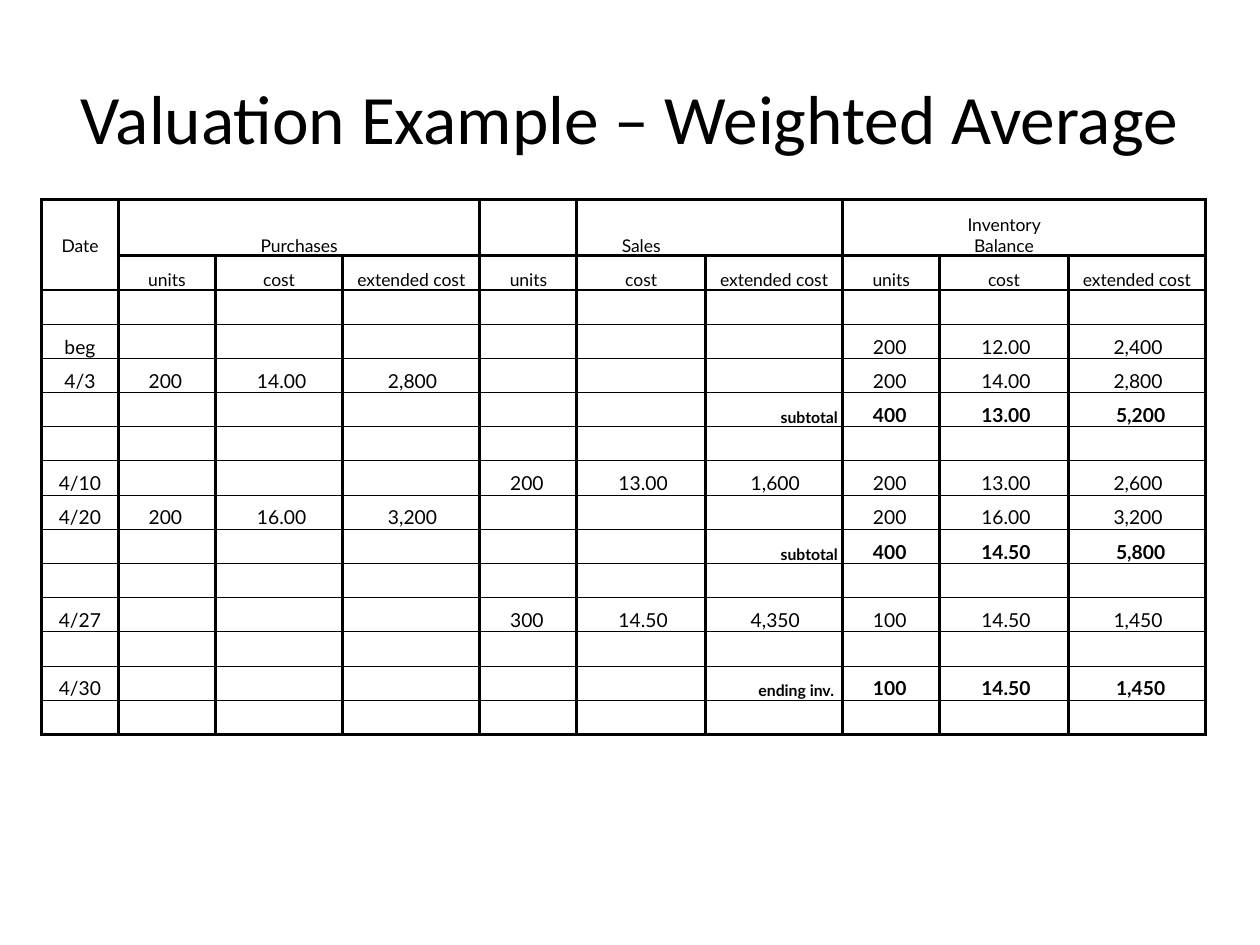
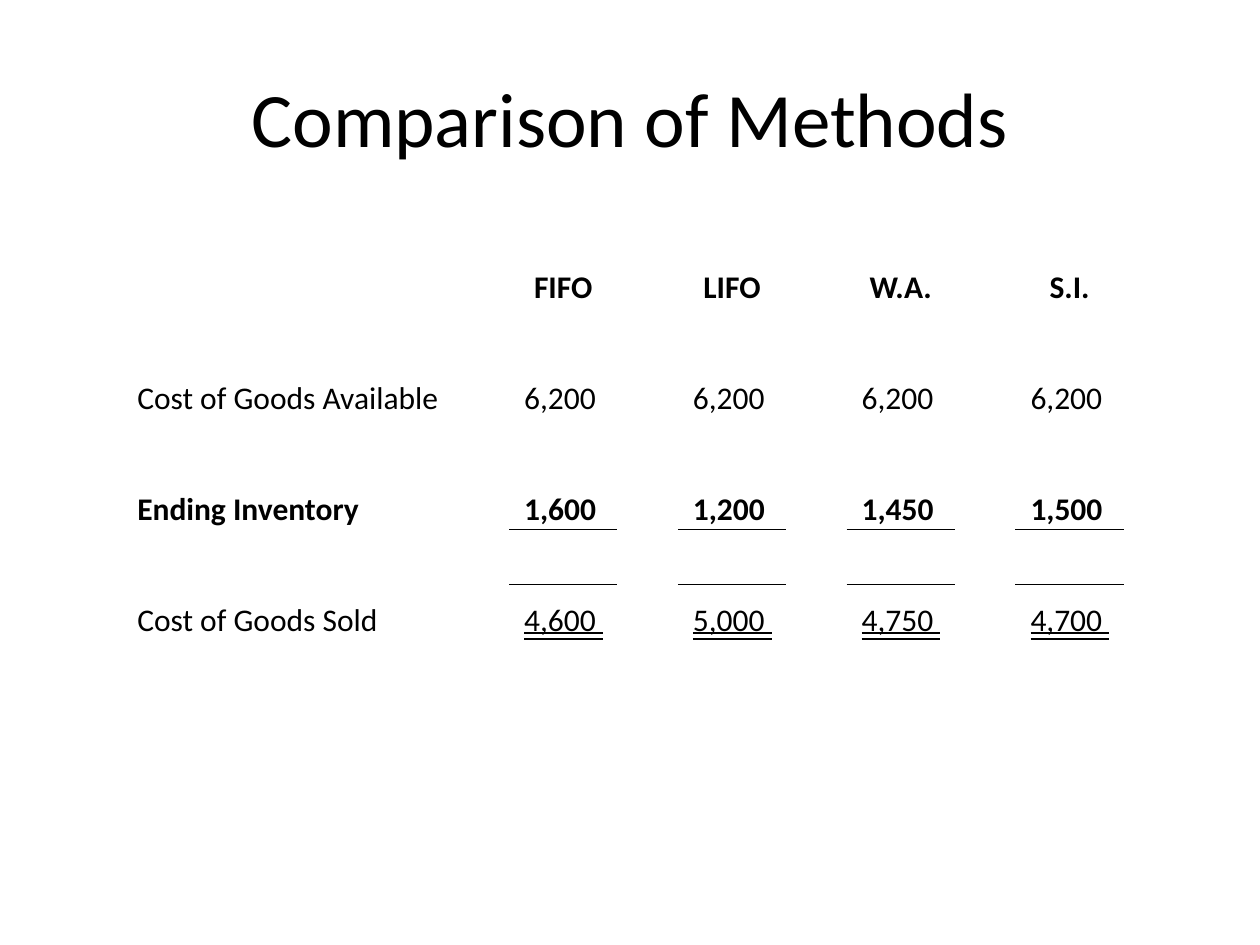
from lxml import etree
from pptx import Presentation
from pptx import util as u
from pptx.dml.color import RGBColor
from pptx.enum import text
from pptx.oxml import ns

COLORS = {"ink": "000000"}
FONTS = {"main": "Calibri", "ledger": "Lato"}
PLAIN_TABLE_STYLE = "{2D5ABB26-0587-4C30-8999-92F81FD0307C}"
CENTER, RIGHT = text.PP_ALIGN.CENTER, text.PP_ALIGN.RIGHT
SINGLE = text.MSO_UNDERLINE.SINGLE_LINE
DOUBLE = text.MSO_UNDERLINE.DOUBLE_LINE


def add_xml(parent, tag, **attributes):
    return etree.SubElement(parent, ns.qn(tag), attributes)


class Deck:
    """Holds the shared style and the current slide."""

    def __init__(self):
        self.presentation = Presentation()
        self.presentation.slide_width = u.Inches(10)
        self.presentation.slide_height = u.Inches(7.5)
        self.slide = None

    def new_slide(self, title, left, width, size):
        layout = self.presentation.slide_layouts[6]
        self.slide = self.presentation.slides.add_slide(layout)
        box = self.slide.shapes.add_textbox(
            u.Inches(left), u.Inches(0.3), u.Inches(width), u.Inches(1.25))
        frame = box.text_frame
        frame.word_wrap = True
        frame.vertical_anchor = text.MSO_ANCHOR.MIDDLE
        frame.paragraphs[0].alignment = CENTER
        self.run(frame.paragraphs[0], title, size=size)

    def run(self, paragraph, words, **font_format):
        run = paragraph.add_run()
        run.text = words
        run.font.color.rgb = RGBColor.from_string(COLORS["ink"])
        values = {"name": FONTS["main"], "bold": False, **font_format}
        values["size"] = u.Pt(values["size"])
        for name, value in values.items():
            setattr(run.font, name, value)

    def table(self, left, top, widths, heights):
        frame = self.slide.shapes.add_table(
            len(heights), len(widths), u.Inches(left), u.Inches(top),
            u.Inches(sum(widths)), u.Inches(sum(heights)))
        table = frame.table
        table.first_row = table.horz_banding = False
        frame._element.find(".//" + ns.qn("a:tableStyleId")).text = PLAIN_TABLE_STYLE
        for column, width in zip(table.columns, widths):
            column.width = u.Inches(width)
        for row, height in zip(table.rows, heights):
            row.height = u.Inches(height)
        return table

    def cell(self, cell, words="", borders=None, align=None, indent=0,
             right=0.01, **font_format):
        """Fill one cell; borders maps the sides L, R, T, B to points."""
        margins = {"left": 0.01, "right": right, "top": 0.01, "bottom": 0}
        for side, margin in margins.items():
            setattr(cell, "margin_" + side, u.Inches(margin))
        cell.vertical_anchor = text.MSO_ANCHOR.BOTTOM
        properties = cell._tc.get_or_add_tcPr()
        for side in "LRTB":
            points = (borders or {}).get(side)
            if points:
                line = add_xml(properties, "a:ln" + side, w=str(u.Pt(points)))
                add_xml(add_xml(line, "a:solidFill"), "a:srgbClr", val=COLORS["ink"])
        cell.fill.background()

        paragraph = cell.text_frame.paragraphs[0]
        if not words:
            add_xml(paragraph._p, "a:endParaRPr", sz=str(font_format["size"] * 100))
            return
        if align is not None:
            paragraph.alignment = align
        if indent:
            position = str(u.Inches(indent))
            paragraph_format = paragraph._p.get_or_add_pPr()
            if font_format.get("underline"):
                # The tab carries the underline from the cell edge to the figure
                stops = add_xml(paragraph_format, "a:tabLst")
                add_xml(stops, "a:tab", pos=position, algn="l")
                words = f"\t{words} "
            else:
                paragraph_format.set("marL", position)
                paragraph_format.set("indent", "0")
        self.run(paragraph, words, **font_format)


# Weighted average ledger: date, purchases, sales, balance, note of a total row
LEDGER = [
    (),
    ("beg", None, None, ("200", "12.00", "2,400")),
    ("4/3", ("200", "14.00", "2,800"), None, ("200", "14.00", "2,800")),
    ("", None, None, ("400", "13.00", "5,200"), "subtotal"),
    (),
    ("4/10", None, ("200", "13.00", "1,600"), ("200", "13.00", "2,600")),
    ("4/20", ("200", "16.00", "3,200"), None, ("200", "16.00", "3,200")),
    ("", None, None, ("400", "14.50", "5,800"), "subtotal"),
    (),
    ("4/27", None, ("300", "14.50", "4,350"), ("100", "14.50", "1,450")),
    (),
    ("4/30", None, None, ("100", "14.50", "1,450"), "ending inv."),
    (),
]
GROUP = ["units", "cost", "extended cost"]
HEADINGS = [["Date", "Purchases", "", "", "", "Sales", "", "", "Inventory Balance", ""],
            [""] + GROUP * 3]
INDENTS = [0.23, 0.32, 0.35]
NOTE_MARGINS = {"subtotal": 0.04, "ending inv.": 0.07}


def ledger_borders(row, column, last_row):
    if row == 0:
        borders = {"T": 2, "B": 2 if column else 0}
        if column % 3 == 1 or column == 0:
            borders["L"] = 2
        if column % 3 == 0:
            borders["R"] = 2
        return borders
    above = {1: 2 if column else 0, 2: 1}.get(row, 0.5)
    below = {1: 1, last_row: 2}.get(row, 0.5)
    return {"L": 2, "R": 2, "T": above, "B": below}


def ledger_formats(entry):
    """Cell formats of one ledger row, keyed by column."""
    if not entry:
        return {}
    date, purchases, sales, balance, *note = entry
    formats = {0: {"words": date, "align": CENTER}}
    for start, figures in zip((1, 4, 7), (purchases, sales, balance)):
        for offset, figure in enumerate(figures or ()):
            formats[start + offset] = {"words": figure, "indent": INDENTS[offset]}
    if note:
        formats[6] = {"words": note[0], "align": RIGHT, "size": 9,
                      "bold": True, "right": NOTE_MARGINS[note[0]]}
        for column in (7, 8, 9):
            formats[column]["bold"] = True
        formats[9]["indent"] += 0.02
        if note[0] == "ending inv.":
            for column in (7, 9):
                formats[column]["underline"] = SINGLE
    return formats


def weighted_average_slide(deck):
    deck.new_slide("Valuation Example – Weighted Average", 0.33, 9.33, 39.6)
    row_height = (4.25 - 0.45) / 14
    table = deck.table(0.33, 1.58, [0.61, 0.77, 1.01, 1.09] + [0.77, 1.02, 1.09] * 2,
                       [0.45] + [row_height] * 14)
    rows = [{column: {"words": words, "align": CENTER, "size": 10}
             for column, words in enumerate(headings)} for headings in HEADINGS]
    rows += [ledger_formats(entry) for entry in LEDGER]
    for row, formats in enumerate(rows):
        for column in range(10):
            values = {"size": 11, "name": FONTS["ledger"], **formats.get(column, {})}
            deck.cell(table.cell(row, column),
                      borders=ledger_borders(row, column, len(rows) - 1), **values)
    table.cell(0, 1).merge(table.cell(0, 3))


# Comparison table: row, label, figures, format
METHODS = ["FIFO", "LIFO", "W.A.", "S.I."]
COMPARISON = {
    0: ("", METHODS, {"bold": True, "align": CENTER}),
    2: ("Cost of Goods Available", ["6,200"] * 4, {"indent": 0.11}),
    4: ("Ending Inventory", ["1,600", "1,200", "1,450", "1,500"],
        {"indent": 0.11, "bold": True}),
    6: ("Cost of Goods Sold", ["4,600", "5,000", "4,750", "4,700"],
        {"indent": 0.11, "underline": DOUBLE}),
}
SUM_LINES = {4: {"B": 0.5}, 5: {"T": 0.5}}


def comparison_slide(deck):
    deck.new_slide("Comparison of Methods", 0.5, 9, 44)
    table = deck.table(1.08, 2, [2.48] + [0.48, 0.86] * 4, [0.44] * 7)
    for row in range(7):
        label, figures, values = COMPARISON.get(row, ("", [""] * 4, {}))
        deck.cell(table.cell(row, 0), label, size=18, bold=values.get("bold", False))
        for index, figure in enumerate(figures):
            column = 2 * index + 1
            deck.cell(table.cell(row, column), size=18)
            deck.cell(table.cell(row, column + 1), figure,
                      borders=SUM_LINES.get(row), size=18, **values)


def main():
    deck = Deck()
    weighted_average_slide(deck)
    comparison_slide(deck)
    deck.presentation.save("out.pptx")


if __name__ == "__main__":
    main()
